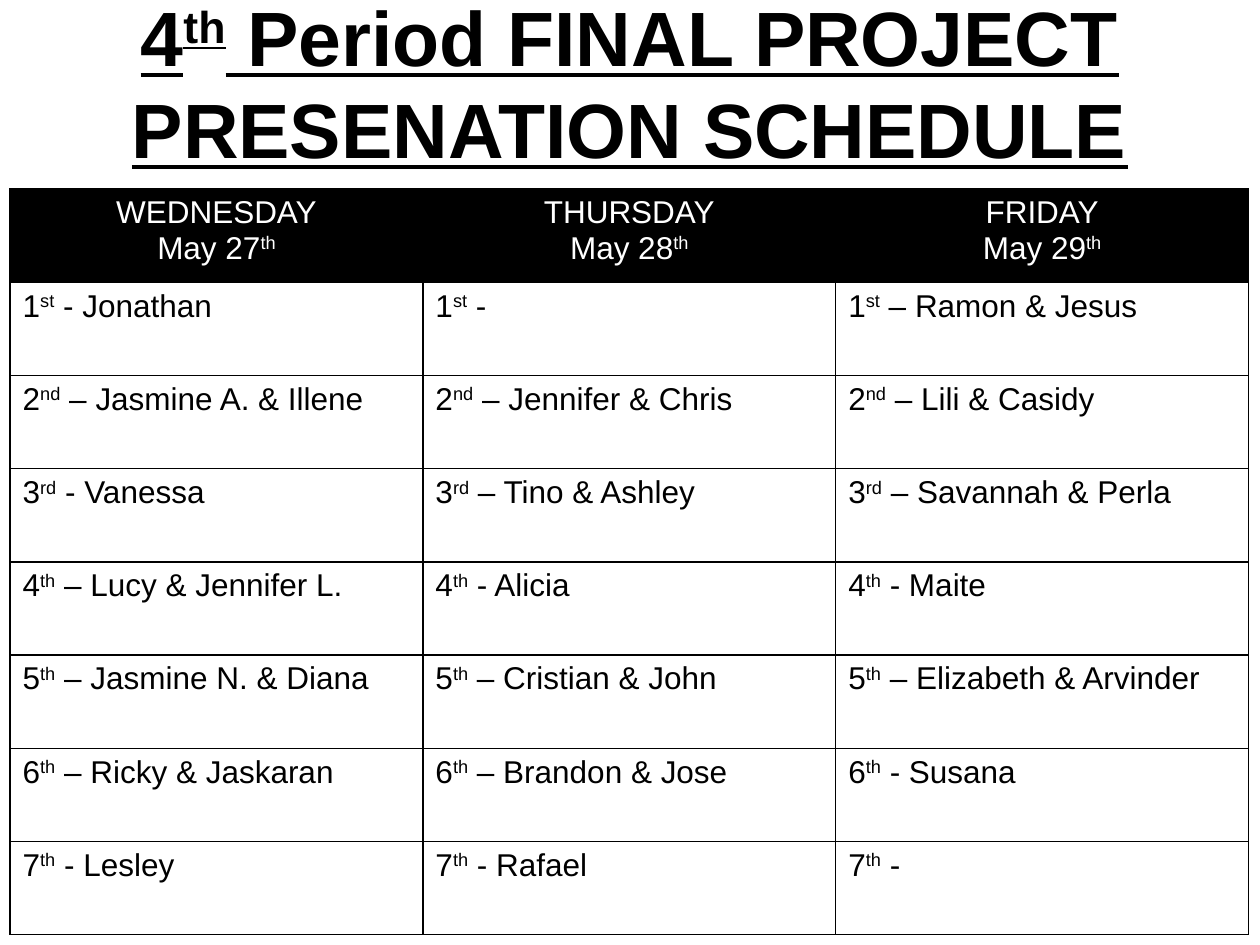
from pptx import Presentation
from pptx.dml.color import RGBColor
from pptx.enum import text
from pptx.oxml import parse_xml
from pptx.oxml.ns import nsdecls
from pptx.util import Inches, Pt

BLACK = RGBColor(0, 0, 0)
WHITE = RGBColor(255, 255, 255)
FONT = "Arial"
ORDINALS = ["1st", "2nd", "3rd", "4th", "5th", "6th", "7th"]
SCHEDULE = {
    ("WEDNESDAY", "27"): [
        "- Jonathan", "– Jasmine A. & Illene", "- Vanessa",
        "– Lucy & Jennifer L.", "– Jasmine N. & Diana",
        "– Ricky & Jaskaran", "- Lesley"],
    ("THURSDAY", "28"): [
        "-", "– Jennifer & Chris", "– Tino & Ashley", "- Alicia",
        "– Cristian & John", "– Brandon & Jose", "- Rafael"],
    ("FRIDAY", "29"): [
        "– Ramon & Jesus", "– Lili & Casidy", "– Savannah & Perla",
        "- Maite", "– Elizabeth & Arvinder", "- Susana", "-"],
}


def add_run(p, words, size, color, raised=False, heading=False):
    r = p.add_run()
    r.text = words
    r.font.name = FONT
    r.font.size = Pt(size)
    r.font.color.rgb = color
    if heading:
        r.font.bold = True
        r.font.underline = True
    if raised:
        r.font._element.set("baseline", "30000")


def add_ordinal(p, number, suffix, rest, size, color, heading=False):
    """Write a number, its raised suffix and the words after it."""
    add_run(p, number, size, color, heading=heading)
    add_run(p, suffix, size, color, raised=True, heading=heading)
    if rest:
        add_run(p, rest, size, color, heading=heading)


def set_borders(cell):
    tc_pr = cell._tc.get_or_add_tcPr()
    for i, side in enumerate(("lnL", "lnR", "lnT", "lnB")):
        tc_pr.insert(i, parse_xml(
            f'<a:{side} {nsdecls("a")} w="{Pt(1)}"><a:solidFill>'
            f'<a:srgbClr val="{BLACK}"/></a:solidFill></a:{side}>'))


def add_title(s, left, top, width, height):
    tf = s.shapes.add_textbox(left, top, width, height).text_frame
    tf.word_wrap = True
    tf.vertical_anchor = text.MSO_ANCHOR.MIDDLE
    first, second = tf.paragraphs[0], tf.add_paragraph()
    first.alignment = second.alignment = text.PP_ALIGN.CENTER
    add_ordinal(first, "4", "th", " Period FINAL PROJECT", 44, BLACK, heading=True)
    add_run(second, "PRESENATION SCHEDULE", 44, BLACK, heading=True)


def add_schedule(s, left, top, width, height):
    table = s.shapes.add_table(
        len(ORDINALS) + 1, len(SCHEDULE), left, top, width, height).table
    for col, ((day, date), names) in enumerate(SCHEDULE.items()):
        # Day heading
        head = table.cell(0, col)
        head.fill.solid()
        head.fill.fore_color.rgb = BLACK
        set_borders(head)
        day_p = head.text_frame.paragraphs[0]
        date_p = head.text_frame.add_paragraph()
        day_p.alignment = date_p.alignment = text.PP_ALIGN.CENTER
        add_run(day_p, day, 18, WHITE)
        add_ordinal(date_p, f"May {date}", "th", "", 18, WHITE)
        # Presenters in order
        for row, (ordinal, name) in enumerate(zip(ORDINALS, names), 1):
            cell = table.cell(row, col)
            cell.fill.background()
            set_borders(cell)
            add_ordinal(cell.text_frame.paragraphs[0], ordinal[0], ordinal[1:],
                        f" {name}", 18, BLACK)


def main():
    prs = Presentation()
    prs.slide_width, prs.slide_height = Inches(10), Inches(7.5)
    s = prs.slides.add_slide(prs.slide_layouts[6])
    add_title(s, Inches(0), Inches(0.3), Inches(10), Inches(0.7))
    add_schedule(s, Inches(0.08), Inches(1.5), Inches(9.83), Inches(5.92))
    prs.save("out.pptx")


if __name__ == "__main__":
    main()
